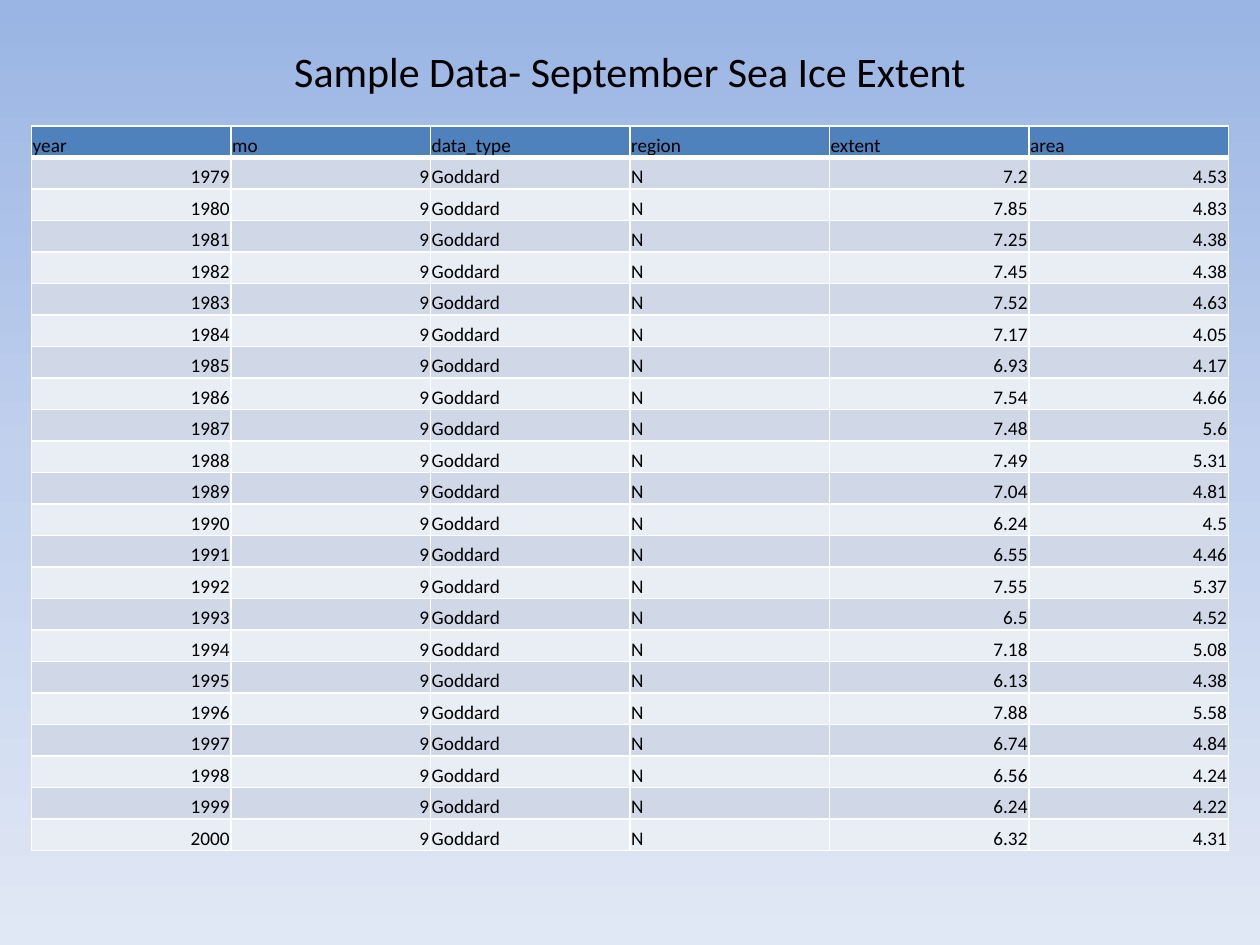
from pptx import Presentation
from pptx.dml.color import RGBColor
from pptx.enum.text import MSO_ANCHOR as Anchor, PP_ALIGN as Align
from pptx.oxml import parse_xml
from pptx.oxml.ns import nsdecls
from pptx.util import Inches, Pt

FONT = "Calibri"
BLACK, WHITE = "000000", "FFFFFF"
HEADER_FILL, BAND_FILLS = "4F81BD", ("D0D8E8", "E9EDF4")
GRADIENT = ((0, "9AB5E4"), (50, "C2D1ED"), (100, "E1E8F5"))

HEADERS = ("year", "mo", "data_type", "region", "extent", "area")
FIRST_YEAR = 1979
EXTENT_AREA = (
    ("7.2", "4.53"), ("7.85", "4.83"), ("7.25", "4.38"), ("7.45", "4.38"),
    ("7.52", "4.63"), ("7.17", "4.05"), ("6.93", "4.17"), ("7.54", "4.66"),
    ("7.48", "5.6"), ("7.49", "5.31"), ("7.04", "4.81"), ("6.24", "4.5"),
    ("6.55", "4.46"), ("7.55", "5.37"), ("6.5", "4.52"), ("7.18", "5.08"),
    ("6.13", "4.38"), ("7.88", "5.58"), ("6.74", "4.84"), ("6.56", "4.24"),
    ("6.24", "4.22"), ("6.32", "4.31"),
)
TEXT_COLUMNS = ("data_type", "region")


def rgb(color):
    return RGBColor.from_string(color)


def set_background(slide, stops):
    """Fill the slide with a gradient running from top to bottom."""
    stop_xml = "".join(
        f'<a:gs pos="{pos * 1000}"><a:srgbClr val="{color}"/></a:gs>'
        for pos, color in stops)
    slide.element.cSld.insert(0, parse_xml(
        f'<p:bg {nsdecls("p", "a")}><p:bgPr><a:gradFill rotWithShape="1">'
        f'<a:gsLst>{stop_xml}</a:gsLst><a:lin ang="5400000" scaled="0"/>'
        '</a:gradFill><a:effectLst/></p:bgPr></p:bg>'))


def write(tf, text, size, align):
    p = tf.paragraphs[0]
    p.alignment = align
    r = p.add_run()
    r.text = text
    for name, value in {"name": FONT, "size": Pt(size), "bold": False}.items():
        setattr(r.font, name, value)
    r.font.color.rgb = rgb(BLACK)


def add_title(slide, text):
    sp = slide.shapes.add_textbox(Inches(0.5), Inches(0.3), Inches(9), Inches(0.53))
    tf = sp.text_frame
    tf.word_wrap = True
    tf.vertical_anchor = Anchor.MIDDLE
    write(tf, text, 24, Align.CENTER)


def set_borders(cell, color, widths):
    """Draw the cell's sides, given as a dict of side letter to points."""
    tc_pr = cell._tc.get_or_add_tcPr()
    for i, side in enumerate("LRTB"):
        tc_pr.insert(i, parse_xml(
            f'<a:ln{side} {nsdecls("a")} w="{Pt(widths.get(side, 1))}">'
            f'<a:solidFill><a:srgbClr val="{color}"/></a:solidFill></a:ln{side}>'))


def format_cell(cell, text, fill, align, widths):
    margin = Inches(0.01)
    for name, value in {"margin_left": margin, "margin_right": margin,
                        "margin_top": margin, "margin_bottom": 0,
                        "vertical_anchor": Anchor.BOTTOM}.items():
        setattr(cell, name, value)
    cell.fill.solid()
    cell.fill.fore_color.rgb = rgb(fill)
    set_borders(cell, WHITE, widths)
    write(cell.text_frame, text, 11, align)


def add_data_table(slide, rows):
    table = slide.shapes.add_table(
        len(rows) + 1, len(HEADERS), Inches(0.25), Inches(1),
        Inches(9.5), Inches(0.25) * (len(rows) + 1)).table
    for col, header in enumerate(HEADERS):
        format_cell(table.cell(0, col), header, HEADER_FILL, Align.LEFT, {"B": 3})
    for i, row in enumerate(rows):
        widths = {"T": 3} if i == 0 else {}
        for col, text in enumerate(row):
            align = Align.LEFT if HEADERS[col] in TEXT_COLUMNS else Align.RIGHT
            format_cell(table.cell(i + 1, col), text, BAND_FILLS[i % 2], align, widths)


def main():
    prs = Presentation()
    prs.slide_width, prs.slide_height = Inches(10), Inches(7.5)
    slide = prs.slides.add_slide(prs.slide_layouts[6])
    set_background(slide, GRADIENT)
    add_title(slide, "Sample Data- September Sea Ice Extent")
    add_data_table(slide, [
        (str(year), "9", "Goddard", "N", extent, area)
        for year, (extent, area) in enumerate(EXTENT_AREA, FIRST_YEAR)])
    prs.save("out.pptx")


if __name__ == "__main__":
    main()
